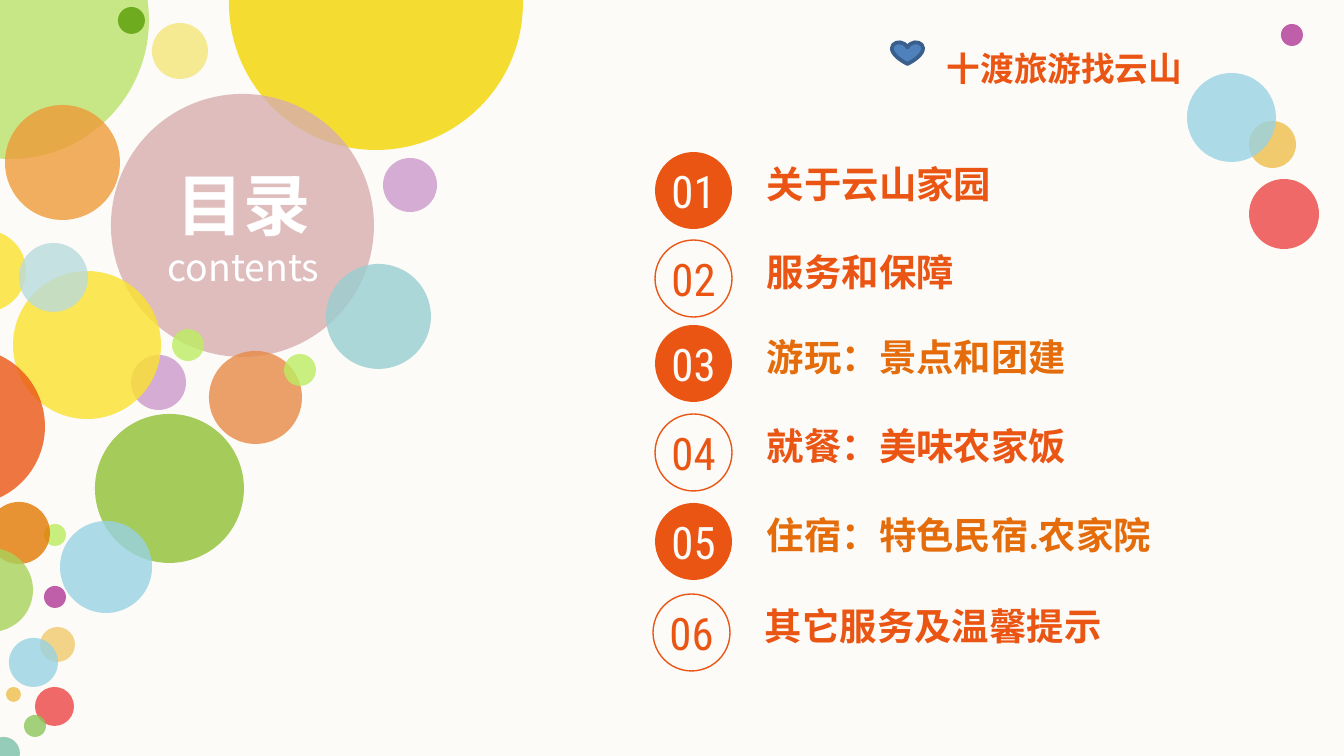
from lxml import etree
from pptx import Presentation
from pptx.dml.color import RGBColor
from pptx.enum.shapes import MSO_SHAPE
from pptx.enum.text import MSO_AUTO_SIZE, PP_ALIGN
from pptx.oxml.ns import qn
from pptx.util import Emu, Pt

OVAL, HEART = MSO_SHAPE.OVAL, MSO_SHAPE.HEART
LEFT, CENTER = PP_ALIGN.LEFT, PP_ALIGN.CENTER
EMU_PER_PX = 914400 / 134.4

CJK, LATIN, NUMERAL = "Noto Sans CJK SC", "Calibri", "Roboto Condensed"
PAPER, WHITE, ORANGE, AMBER = "FCFBF7", "FFFFFF", "EA5514", "E46C0A"

# Bubbles, back to front: left, top, diameter, colour, opacity in percent
LEFT_BUBBLES = [
    (-129, -119, 278, "BAE36B", 80),
    (118, 7, 27, "6EAB1F", 100),
    (5, 105, 115, "ED9B38", 80),
    (152, 23, 56, "F5EA91", 100),
    (229, -144, 294, "F4D500", 80),
    (111, 94, 263, "D8AEAF", 80),
    (326, 264, 105, "99CED2", 80),
    (383, 158, 54, "CB99CC", 80),
    (209, 351, 93, "E78A47", 80),
    (95, 414, 149, "A5CB5A", 100),
    (284, 354, 32, "BDED63", 80),
    (172, 329, 32, "BCED61", 80),
    (131, 355, 55, "CB99CC", 80),
    (13, 271, 148, "FBE22D", 80),
    (-56, 230, 82, "FBE22D", 80),
    (44, 524, 22, "BCED60", 80),
    (44, 586, 22, "B03896", 80),
    (40, 627, 35, "F0CA6C", 80),
    (6, 687, 15, "F0CA6C", 100),
    (-13, 737, 33, "7BBFAA", 80),
    (35, 687, 39, "EB4544", 80),
    (24, 715, 22, "8DC65B", 80),
    (9, 638, 49, "98D2E3", 80),
    (19, 243, 69, "B9DBDD", 80),
    (60, 521, 92, "98D2E3", 80),
    (-12, 502, 62, "E27902", 80),
    (-51, 548, 84, "A9D25A", 80),
    (-112, 348, 157, ORANGE, 80),
]
RIGHT_BUBBLES = [
    (1281, 24, 22, "B03896", 80),
    (1249, 121, 47, "F0CA6C", 100),
    (1249, 179, 70, "EB4544", 80),
    (1187, 73, 89, "98D2E3", 80),
]

# Contents entries: left, top, label, label width, label font, label colour
ENTRIES = [
    (655, 152, "关于云山家园", 286, NUMERAL, ORANGE),
    (655, 240, "服务和保障", 286, NUMERAL, ORANGE),
    (655, 325, "游玩：景点和团建", 391, LATIN, AMBER),
    (655, 414, "就餐：美味农家饭", 317, LATIN, ORANGE),
    (655, 503, "住宿：特色民宿.农家院", 419, LATIN, AMBER),
    (653, 594, "其它服务及温馨提示", 372, LATIN, ORANGE),
]
BADGE = 77


def px(value):
    return Emu(round(value * EMU_PER_PX))


def rgb(color):
    return RGBColor.from_string(color)


def add_figure(page, kind, left, top, width, height, fill=None, opacity=100,
               line=None, line_width=0.75):
    shape = page.shapes.add_shape(kind, px(left), px(top), px(width), px(height))
    shape.shadow.inherit = False
    if fill:
        shape.fill.solid()
        shape.fill.fore_color.rgb = rgb(fill)
        if opacity < 100:
            color = shape.fill._xPr.find(qn("a:solidFill"))[0]
            etree.SubElement(color, qn("a:alpha")).set("val", str(opacity * 1000))
    else:
        shape.fill.background()
    if line:
        shape.line.color.rgb = rgb(line)
        shape.line.width = Pt(line_width)
    else:
        shape.line.fill.background()


def add_text(page, left, top, width, height, lines, font, color, align=LEFT):
    """Each line is a (text, size, bold) tuple."""
    box = page.shapes.add_textbox(px(left), px(top), px(width), px(height))
    frame = box.text_frame
    frame.margin_left = frame.margin_right = 0
    frame.margin_top = frame.margin_bottom = 0
    frame.word_wrap = True
    frame.auto_size = MSO_AUTO_SIZE.SHAPE_TO_FIT_TEXT
    frame.text = "\n".join(text for text, _, _ in lines)
    for para, (_, size, bold) in zip(frame.paragraphs, lines):
        para.alignment = align
        for span in para.runs:
            span.font.name = font
            span.font.size = Pt(size)
            span.font.bold = bold
            span.font.color.rgb = rgb(color)
            east_asian = etree.SubElement(span.font._element, qn("a:ea"))
            east_asian.set("typeface", CJK)


def add_bubbles(page, bubbles):
    for left, top, size, color, opacity in bubbles:
        add_figure(page, OVAL, left, top, size, size, color, opacity)


def add_entry(page, number, left, top, label, width, font, color):
    filled = number % 2 == 1
    add_figure(page, OVAL, left, top, BADGE, BADGE,
               fill=ORANGE if filled else None, line=None if filled else ORANGE)
    add_text(page, left, top + 12, BADGE, 54, [(f"{number:02d}", 24, False)],
             NUMERAL, PAPER if filled else ORANGE, CENTER)
    add_text(page, left + 112, top + 9, width, 46, [(label, 20, True)], font, color)


def main():
    deck = Presentation()
    deck.slide_width, deck.slide_height = px(1344), px(756)
    page = deck.slides.add_slide(deck.slide_layouts[6])
    page.background.fill.solid()
    page.background.fill.fore_color.rgb = rgb(PAPER)

    # Left bubbles and title
    add_bubbles(page, LEFT_BUBBLES)
    add_text(page, 142, 163, 203, 126,
             [("目录", 36, True), ("contents", 20, False)], CJK, WHITE, CENTER)

    # Contents list
    for number, entry in enumerate(ENTRIES, start=1):
        add_entry(page, number, *entry)

    # Right bubbles and tagline
    add_bubbles(page, RIGHT_BUBBLES)
    add_text(page, 947, 48, 246, 41, [("十渡旅游找云山", 18, True)], LATIN, ORANGE)
    add_figure(page, HEART, 892, 42, 31, 22, "4F81BD", line="3A5F8C", line_width=2)

    deck.save("out.pptx")


if __name__ == "__main__":
    main()
